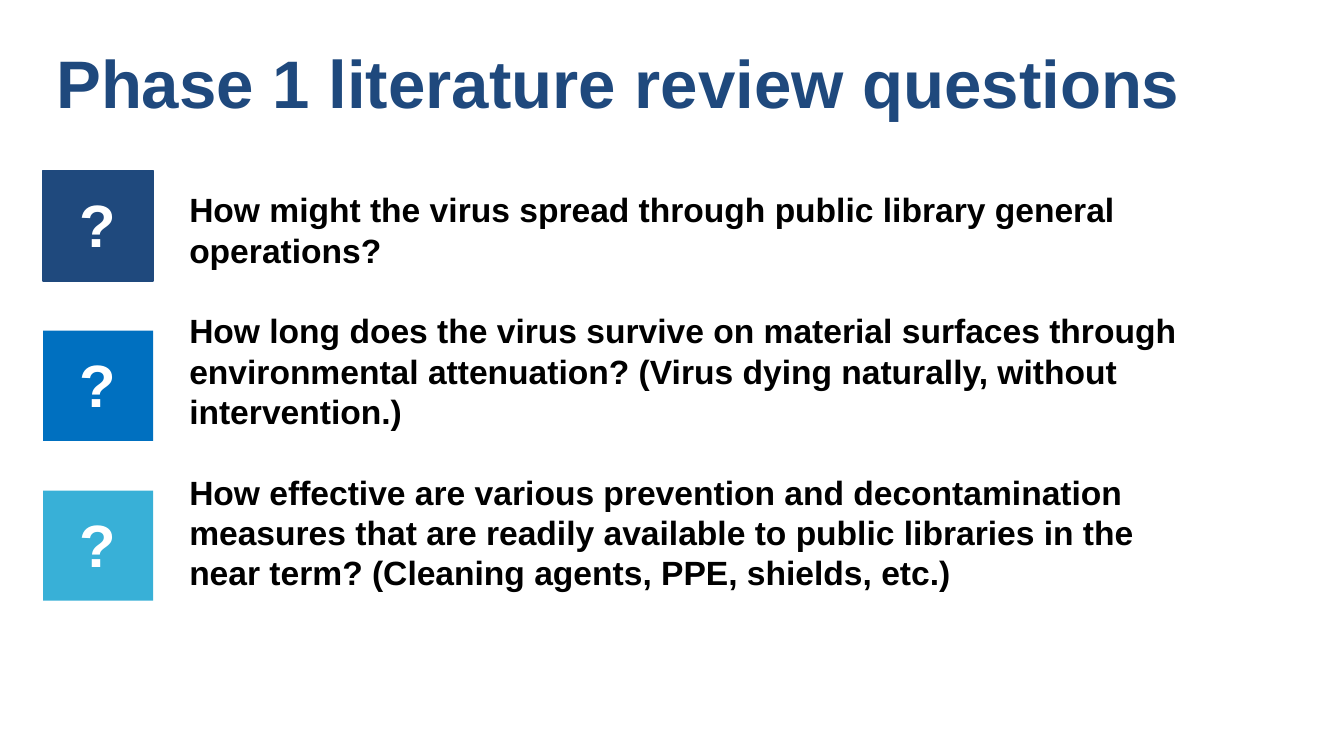
from pptx import Presentation
from pptx.dml.color import RGBColor
from pptx.enum.shapes import MSO_SHAPE as SHAPE
from pptx.util import Inches, Pt

COLORS = {
    "navy": "1F497D",
    "blue": "0070C0",
    "sky": "38B0D7",
    "white": "FFFFFF",
    "black": "000000",
}
QUESTIONS = [
    "How might the virus spread through public library general operations?",
    "How long does the virus survive on material surfaces through "
    "environmental attenuation? (Virus dying naturally, without intervention.)",
    "How effective are various prevention and decontamination measures that are "
    "readily available to public libraries in the near term? "
    "(Cleaning agents, PPE, shields, etc.)",
]
TILES = ["navy", "blue", "sky"]
TILE_LEFT, TILE_TOP, TILE_SIZE, TILE_STEP = 0.32, 1.27, 0.82, 1.19
LEADING = 1.2


def rgb(name):
    return RGBColor.from_string(COLORS[name])


def add_text(slide, box, lines, size, color, wrap=True, leading=None):
    tf = slide.shapes.add_textbox(*map(Inches, box)).text_frame
    tf.word_wrap = wrap
    for i, line in enumerate(lines):
        p = tf.paragraphs[0] if i == 0 else tf.add_paragraph()
        p.text = line
        p.font.name = "Arial"
        p.font.size = Pt(size)
        p.font.bold = True
        p.font.color.rgb = rgb(color)
        if leading:
            p.line_spacing = Pt(size * leading)
            if i:
                p.space_before = Pt(size * leading)


def add_tile(slide, top, color):
    box = (TILE_LEFT, top, TILE_SIZE, TILE_SIZE)
    sp = slide.shapes.add_shape(SHAPE.RECTANGLE, *map(Inches, box))
    sp.shadow.inherit = False
    sp.fill.solid()
    sp.fill.fore_color.rgb = rgb(color)
    if color == "navy":
        sp.line.color.rgb = rgb(color)
        sp.line.width = Pt(0.75)
    else:
        sp.line.fill.background()


def main():
    prs = Presentation()
    prs.slide_width, prs.slide_height = Inches(10), Inches(10 * 9 / 16)
    slide = prs.slides.add_slide(prs.slide_layouts[6])
    add_text(slide, (1.31, 1.36, 7.82, 3.19), QUESTIONS, 18, "black", leading=LEADING)
    add_text(slide, (0.32, 0.26, 8.81, 0.82), ["Phase 1 literature review questions"],
             36, "navy", leading=LEADING)
    tops = [TILE_TOP + i * TILE_STEP for i in range(len(TILES))]
    for top, color in zip(tops, TILES):
        add_tile(slide, top, color)
    for top in tops:
        add_text(slide, (0.49, top + 0.08, 0.48, 0.64), ["?"], 32, "white", wrap=False)
    prs.save("out.pptx")


if __name__ == "__main__":
    main()
